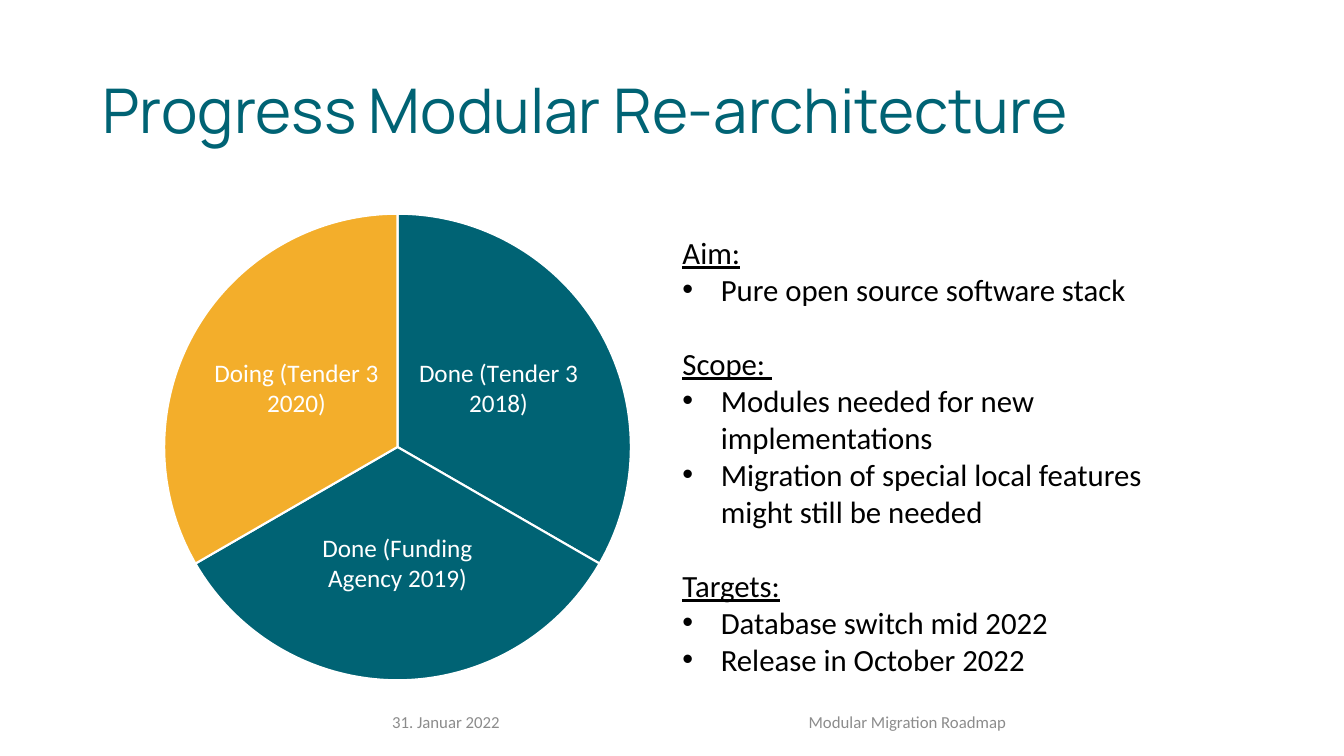
from lxml import etree
from pptx import Presentation
from pptx.chart.data import CategoryChartData
from pptx.dml.color import RGBColor
from pptx.enum.chart import XL_CHART_TYPE, XL_LABEL_POSITION
from pptx.enum.text import MSO_ANCHOR, PP_ALIGN
from pptx.oxml.ns import qn
from pptx.util import Inches, Pt

PIE = XL_CHART_TYPE.PIE
MID = XL_LABEL_POSITION.CENTER
MIDDLE, TOP = MSO_ANCHOR.MIDDLE, MSO_ANCHOR.TOP
LEFT, CENTER = PP_ALIGN.LEFT, PP_ALIGN.CENTER
WIDE, HIGH = Inches(13.33), Inches(7.5)
TEAL, GOLD, GREY, BLACK, WHITE = "006374", "F3AE2B", "8C8C8C", "000000", "FFFFFF"
BODY = "Calibri"

PARTS = [
    ("Done (Tender 3 2018)", TEAL),
    ("Done (Funding Agency 2019)", TEAL),
    ("Doing (Tender 3 2020)", GOLD),
]
GOALS = [
    ("Aim:", ["Pure open source software stack"]),
    ("Scope: ", ["Modules needed for new implementations",
                 "Migration of special local features might still be needed"]),
    ("Targets:", ["Database switch mid 2022", "Release in October 2022"]),
]


def color(code):
    """Turn a hex string into a colour."""
    return RGBColor.from_string(code)


def place(left, top, width, height):
    """Turn percentages of the slide into lengths."""
    return (int(WIDE * left / 100), int(HIGH * top / 100),
            int(WIDE * width / 100), int(HIGH * height / 100))


def style(font, size, code, name=BODY):
    """Set size, colour and typeface of a font."""
    font.size, font.name = Pt(size), name
    font.color.rgb = color(code)


def add_box(slide, spot, anchor=MIDDLE):
    """Add a wrapping text box and return its frame."""
    frame = slide.shapes.add_textbox(*place(*spot)).text_frame
    frame.word_wrap = True
    frame.vertical_anchor = anchor
    return frame


def add_line(slide, spot, text, size, code, name=BODY, align=LEFT):
    """Add a box that holds one line of text."""
    para = add_box(slide, spot).paragraphs[0]
    para.text, para.alignment = text, align
    style(para.font, size, code, name)
    return para


def add_bullet(para):
    """Give a paragraph a hanging bullet."""
    props = para._p.get_or_add_pPr()
    indent = Inches(0.38)
    props.set("marL", str(indent))
    props.set("indent", str(-indent))
    etree.SubElement(props, qn("a:buFont"), typeface="Arial")
    etree.SubElement(props, qn("a:buChar"), char="•")


def add_goals(slide, spot, goals):
    """Add underlined headings, each with its bullets."""
    frame = add_box(slide, spot, TOP)
    for rank, (head, items) in enumerate(goals):
        para = frame.add_paragraph() if rank else frame.paragraphs[0]
        para.text = head
        if rank:
            para.space_before = Pt(26.5)
        style(para.font, 22, BLACK)
        para.font.underline = True
        for item in items:
            para = frame.add_paragraph()
            para.text = item
            add_bullet(para)
            style(para.font, 22, BLACK)


def set_plot(chart, **shares):
    """Fix the plot area as shares of the chart."""
    area = chart._chartSpace.chart.plotArea
    for old in area.findall(qn("c:layout")):
        area.remove(old)
    layout = etree.Element(qn("c:layout"))
    area.insert(0, layout)
    manual = etree.SubElement(layout, qn("c:manualLayout"))
    modes = {"layoutTarget": "inner", "xMode": "edge", "yMode": "edge"}
    for tag, val in {**modes, **shares}.items():
        etree.SubElement(manual, qn("c:" + tag), val=str(val))


def add_pie(slide, spot, parts):
    """Add a pie of equal slices with their names inside."""
    data = CategoryChartData()
    data.categories = [name for name, _ in parts]
    data.add_series("Series 1", [33] * len(parts))
    chart = slide.shapes.add_chart(PIE, *place(*spot), data).chart
    chart.has_legend = chart.has_title = False
    style(chart.font, 10, BLACK)
    set_plot(chart, x=0.15, y=0.03, w=0.71, h=0.93)
    plot = chart.plots[0]
    plot.vary_by_categories = True
    for rank, (_, code) in enumerate(parts):
        slice_ = plot.series[0].points[rank].format
        slice_.fill.solid()
        slice_.fill.fore_color.rgb = color(code)
        slice_.line.color.rgb = color(WHITE)
        slice_.line.width = Pt(1.5)
    labels = plot.series[0].data_labels
    labels.show_category_name = True
    labels.show_value = labels.show_percentage = False
    labels.position = MID
    style(labels.font, 18, WHITE)


def main():
    """Build and save the slide."""
    deck = Presentation()
    deck.slide_width, deck.slide_height = WIDE, HIGH
    slide = deck.slides.add_slide(deck.slide_layouts[6])
    title = add_line(slide, (6.9, 5.33, 86.27, 19.33),
                     "Progress Modular Re-architecture", 44, TEAL, "Manrope")
    title.line_spacing = 0.9
    add_line(slide, (28.43, 92.8, 18.45, 5.33), "31. Januar 2022", 12, GREY)
    add_line(slide, (47.49, 92.8, 40.06, 5.33),
             "Modular Migration Roadmap", 12, GREY, align=CENTER)
    add_pie(slide, (4.88, 26.27, 48.91, 66.4), PARTS)
    add_goals(slide, (50.04, 30.27, 40.89, 62.4), GOALS)
    deck.save("out.pptx")


if __name__ == "__main__":
    main()
